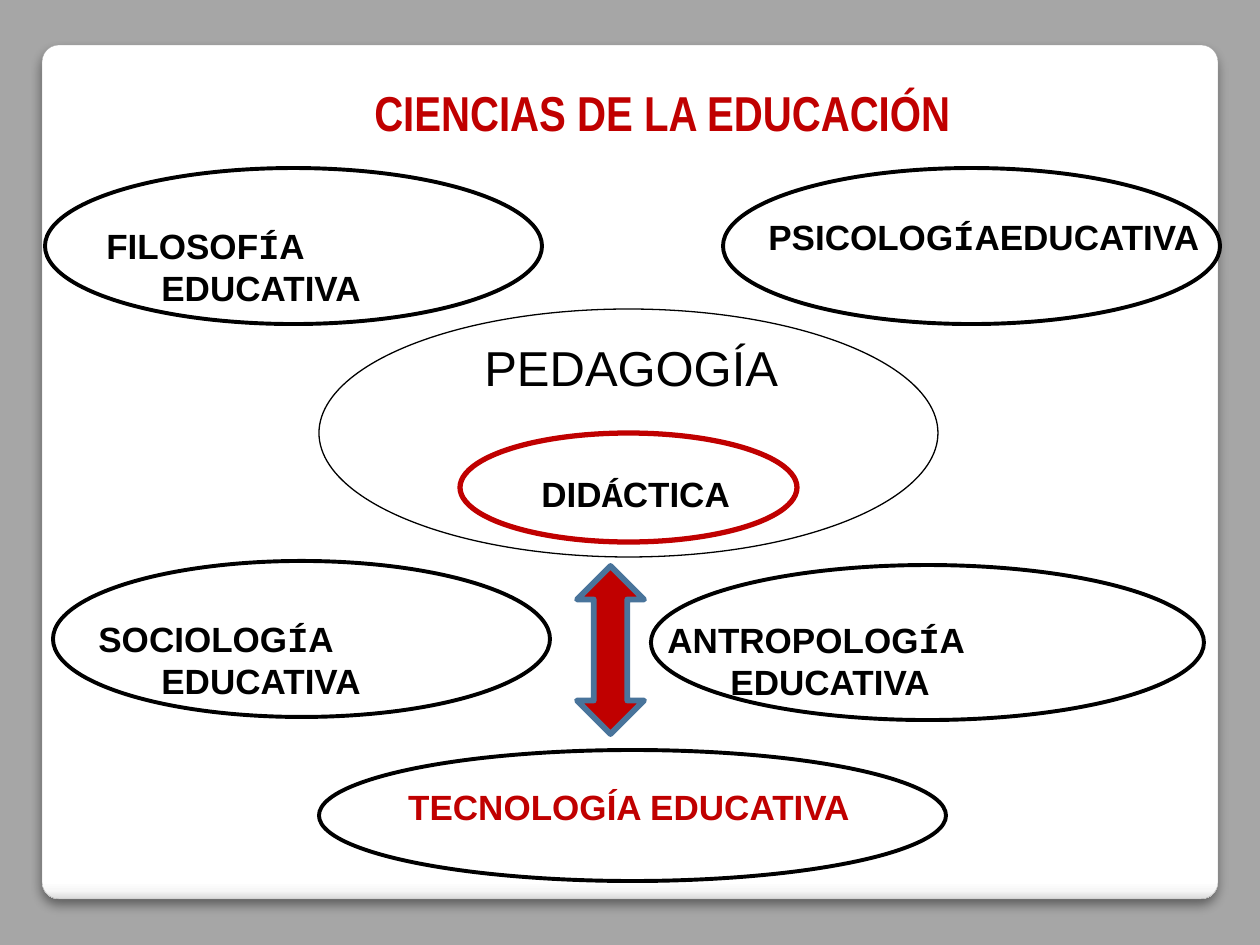
"""Builds a slide that maps the sciences of education around pedagogy."""
from dataclasses import dataclass

from lxml import etree
from pptx import Presentation, util as u
from pptx.dml.color import RGBColor
from pptx.enum import shapes, text
from pptx.oxml import parse_xml
from pptx.oxml.ns import nsdecls


@dataclass(frozen=True)
class Theme:
    backdrop: str = "A6A6A6"
    edge: str = "A4A4A4"
    ink: str = "000000"
    red: str = "C00000"
    steel: str = "49749B"
    font: str = "Arial"
    accent_font: str = "Courier New"
    title_font: str = "Arial Narrow"
    large: int = 28
    normal: int = 20


THEME = Theme()
PX = 914400 / 126
SLIDE_SIZE = (1260, 945)
PANEL = (42, 45, 1176, 854)
PANEL_STOPS = [(0, "FFFFFF"), (98, "FFFFFF"), (99, "F7F7F7"), (100, "DADADA")]
ARROW = (577, 566, 67, 168)
HANG = 63

ELLIPSES = [
    ((460, 433, 337, 109), THEME.red, 3),
    ((319, 309, 619, 248), THEME.ink, 0.75),
    ((651, 565, 553, 155), THEME.ink, 2.25),
    ((45, 168, 497, 156), THEME.ink, 2.25),
    ((723, 168, 497, 156), THEME.ink, 2.25),
    ((53, 561, 497, 156), THEME.ink, 2.25),
    ((319, 750, 627, 131), THEME.ink, 2.25),
]

BRANCHES = [
    ((500, 466, 256, 54), 29, ("DID", "Á", "CTICA")),
    ((655, 612, 525, 55), 0, ("ANTROPOLOG", "Í", "A EDUCATIVA")),
    ((86, 218, 428, 55), 8, ("FILOSOF", "Í", "A EDUCATIVA")),
    ((756, 209, 464, 55), 0, ("PSICOLOG", "Í", "AEDUCATIVA")),
    ((86, 611, 464, 55), 0, ("SOCIOLOG", "Í", "A EDUCATIVA")),
]

LEFT, CENTER = text.PP_ALIGN.LEFT, text.PP_ALIGN.CENTER
HEADINGS = [
    ((362, 76, 694, 72), "CIENCIAS DE LA EDUCACIÓN", THEME.title_font, THEME.large, THEME.red, True, LEFT),
    ((472, 331, 320, 72), "PEDAGOGÍA", THEME.font, THEME.large, THEME.ink, False, LEFT),
    ((357, 779, 544, 55), "TECNOLOGÍA EDUCATIVA", THEME.font, THEME.normal, THEME.red, True, CENTER),
]


def px(value):
    return u.Emu(round(value * PX))


def place(area):
    return [px(value) for value in area]


def color(code):
    return RGBColor.from_string(code)


def add_outline(page, kind, area, line, width, fill=None):
    shape = page.shapes.add_shape(kind, *place(area))
    shape.shadow.inherit = False
    if fill:
        shape.fill.solid()
        shape.fill.fore_color.rgb = color(fill)
    else:
        shape.fill.background()
    shape.line.color.rgb = color(line)
    shape.line.width = u.Pt(width)
    return shape


def add_panel(page):
    panel = add_outline(page, shapes.MSO_SHAPE.ROUNDED_RECTANGLE, PANEL, THEME.edge, 0.16)
    panel.adjustments[0] = 0.02
    stops = "".join(
        f'<a:gs pos="{at * 1000}"><a:srgbClr val="{code}"/></a:gs>' for at, code in PANEL_STOPS
    )
    gradient = parse_xml(
        f'<a:gradFill {nsdecls("a")}><a:gsLst>{stops}</a:gsLst><a:lin ang="5400000" scaled="0"/></a:gradFill>'
    )
    properties = panel.element.spPr
    old_fill = properties.find("{*}noFill")
    properties.replace(old_fill, gradient)
    shadow = parse_xml(
        f'<a:outerShdw {nsdecls("a")} blurRad="{u.Pt(6)}" dist="{u.Pt(4)}" dir="5400000" algn="t" rotWithShape="0">'
        f'<a:srgbClr val="{THEME.ink}"><a:alpha val="44000"/></a:srgbClr></a:outerShdw>'
    )
    properties.find("{*}effectLst").append(shadow)


def add_text(page, area, pieces, font, size, ink, bold, align):
    box = page.shapes.add_textbox(*place(area))
    box.text_frame.word_wrap = True
    para = box.text_frame.paragraphs[0]
    para.alignment = align
    for index, piece in enumerate(pieces):
        span = para.add_run()
        span.text = piece
        span.font.name = THEME.accent_font if index % 2 else font
        span.font.size = u.Pt(size)
        span.font.bold = bold
        span.font.color.rgb = color(ink)
    return para


def main():
    deck = Presentation()
    deck.slide_width, deck.slide_height = place(SLIDE_SIZE)
    page = deck.slides.add_slide(deck.slide_layouts[6])
    page.background.fill.solid()
    page.background.fill.fore_color.rgb = color(THEME.backdrop)
    add_panel(page)
    for area, lead, pieces in BRANCHES:
        para = add_text(page, area, pieces, THEME.font, THEME.normal, THEME.ink, True, LEFT)
        properties = para._p.get_or_add_pPr()
        properties.set("marL", str(px(HANG)))
        properties.set("indent", str(px(lead - HANG)))
    for area, line, width in ELLIPSES:
        add_outline(page, shapes.MSO_SHAPE.OVAL, area, line, width)
    for area, words, *style in HEADINGS:
        add_text(page, area, [words], *style)
    add_outline(page, shapes.MSO_SHAPE.UP_DOWN_ARROW, ARROW, THEME.steel, 3.35, THEME.red)
    deck.save("out.pptx")


if __name__ == "__main__":
    main()
